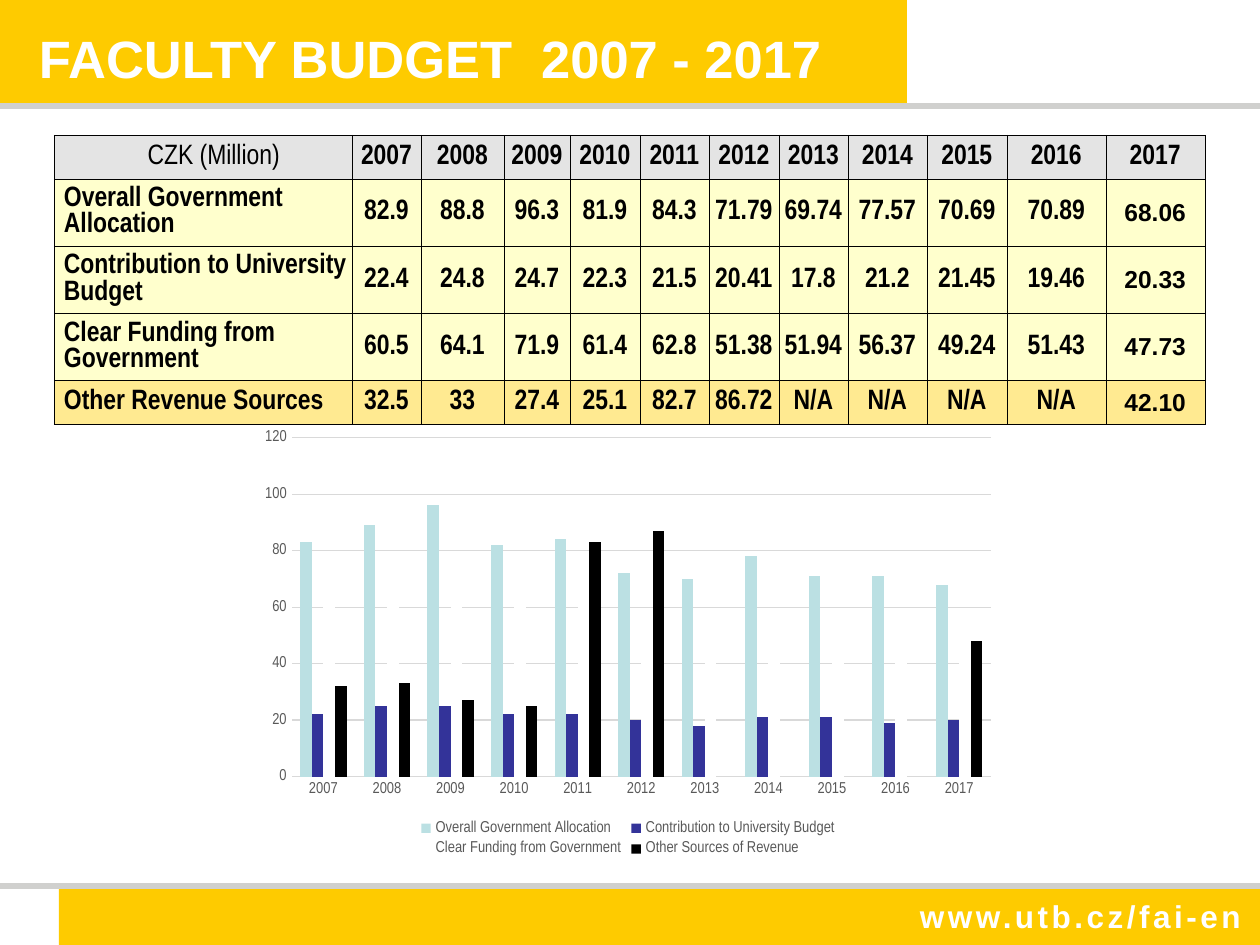
from lxml import etree
from pptx import Presentation
from pptx import util as u
from pptx.chart.data import CategoryChartData
from pptx.dml.color import RGBColor
from pptx.enum import chart as ch, shapes, text
from pptx.oxml.ns import qn

YELLOW = RGBColor(0xFE, 0xCB, 0x00)
RULE = RGBColor(0xD0, 0xD0, 0xCE)
WHITE = RGBColor(0xFF, 0xFF, 0xFF)
BLACK = RGBColor(0x00, 0x00, 0x00)
HEADER = RGBColor(0xE4, 0xE4, 0xE4)
CREAM = RGBColor(0xFF, 0xFF, 0xCD)
SAND = RGBColor(0xFF, 0xEA, 0x91)
GREY = RGBColor(0x59, 0x59, 0x59)
GRID = RGBColor(0xD9, 0xD9, 0xD9)
AQUA = RGBColor(0xBB, 0xE0, 0xE3)
NAVY = RGBColor(0x33, 0x33, 0x99)

YEARS = [str(year) for year in range(2007, 2018)]
BUDGET = [
    ("Overall Government Allocation",
     "82.9 88.8 96.3 81.9 84.3 71.79 69.74 77.57 70.69 70.89 68.06".split()),
    ("Contribution to University Budget",
     "22.4 24.8 24.7 22.3 21.5 20.41 17.8 21.2 21.45 19.46 20.33".split()),
    ("Clear Funding from Government",
     "60.5 64.1 71.9 61.4 62.8 51.38 51.94 56.37 49.24 51.43 47.73".split()),
    ("Other Revenue Sources",
     "32.5 33 27.4 25.1 82.7 86.72 N/A N/A N/A N/A 42.10".split()),
]
OTHER_SOURCES = [32, 33, 27, 25, 83, 87, None, None, None, None, 48]
COLUMNS = [298, 69, 83, 66, 70, 69, 70, 69, 79, 80, 99, 99]
ROWS = [44, 67, 67, 67, 44]


def px(n):
    return u.Emu(round(n * 914400 / 126))


class Deck:
    sans = "Arial"
    narrow = "Arial Narrow"

    def __init__(self, width, height):
        self.prs = Presentation()
        self.prs.slide_width, self.prs.slide_height = px(width), px(height)
        self.s = self.prs.slides.add_slide(self.prs.slide_layouts[6])

    def style(self, font, name, size, color, bold=False):
        font.name, font.size, font.bold = name, u.Pt(size), bold
        font.color.rgb = color

    def run(self, p, words, name, size, color, bold=True):
        r = p.add_run()
        r.text = words
        self.style(r.font, name, size, color, bold)
        return r

    def band(self, *box):
        sp = self.s.shapes.add_shape(shapes.MSO_SHAPE.RECTANGLE, *map(px, box))
        sp.shadow.inherit = False
        sp.fill.solid()
        sp.fill.fore_color.rgb = YELLOW
        sp.line.fill.background()

    def rule(self, y):
        line = self.s.shapes.add_connector(
            shapes.MSO_CONNECTOR.STRAIGHT, 0, px(y), self.prs.slide_width, px(y))
        line.line.color.rgb = RULE
        line.line.width = u.Pt(3)
        etree.SubElement(line._element.spPr, qn("a:effectLst"))

    def label(self, words, size, box, inset, spacing=0):
        tf = self.s.shapes.add_textbox(*map(px, box)).text_frame
        tf.word_wrap = True
        tf.margin_left, tf.margin_right = px(inset), 0
        r = self.run(tf.paragraphs[0], words, self.sans, size, WHITE)
        if spacing:
            r.font._element.set("spc", str(spacing * 100))

    def border(self, cell):
        tcPr = cell._tc.get_or_add_tcPr()
        for side in ("lnL", "lnR", "lnT", "lnB"):
            ln = etree.SubElement(tcPr, qn("a:" + side), w=str(u.Pt(0.25)))
            fill = etree.SubElement(ln, qn("a:solidFill"))
            etree.SubElement(fill, qn("a:srgbClr"), val=str(BLACK))

    def cell(self, cell, words, fill, inset=0, centred=True, small=False, bold=True):
        self.border(cell)
        cell.fill.solid()
        cell.fill.fore_color.rgb = fill
        cell.margin_left = px(inset)
        cell.margin_right = cell.margin_top = cell.margin_bottom = 0
        cell.vertical_anchor = text.MSO_ANCHOR.MIDDLE
        p = cell.text_frame.paragraphs[0]
        p.alignment = text.PP_ALIGN.CENTER if centred else text.PP_ALIGN.LEFT
        name, size = (self.sans, 14) if small else (self.narrow, 16)
        self.run(p, words, name, size, BLACK, bold)

    def table(self, x, y):
        table = self.s.shapes.add_table(
            len(ROWS), len(COLUMNS), px(x), px(y), px(sum(COLUMNS)), px(sum(ROWS))).table
        for column, width in zip(table.columns, COLUMNS):
            column.width = px(width)
        for row, height in zip(table.rows, ROWS):
            row.height = px(height)
        self.cell(table.cell(0, 0), " CZK (Million)", HEADER, 15, bold=False)
        for j, year in enumerate(YEARS, 1):
            self.cell(table.cell(0, j), year, HEADER)
        for i, (name, amounts) in enumerate(BUDGET, 1):
            fill = SAND if i == len(BUDGET) else CREAM
            self.cell(table.cell(i, 0), name, fill, 10, centred=False)
            for j, amount in enumerate(amounts, 1):
                self.cell(table.cell(i, j), amount, fill, small=j == len(YEARS))

    def chart(self, *box):
        data = CategoryChartData()
        data.categories = YEARS
        for name, amounts in BUDGET[:3]:
            data.add_series(name, [round(float(amount)) for amount in amounts])
        data.add_series("Other Sources of Revenue", OTHER_SOURCES)
        chart = self.s.shapes.add_chart(
            ch.XL_CHART_TYPE.COLUMN_CLUSTERED, *map(px, box), data).chart
        self.style(chart.font, self.narrow, 10, BLACK)
        chart.has_title = False
        plot = chart.plots[0]
        plot.gap_width, plot.overlap, plot.vary_by_categories = 150, 0, False
        for series, color in zip(plot.series, (AQUA, NAVY, WHITE, BLACK)):
            series.format.fill.solid()
            series.format.fill.fore_color.rgb = color
            series.invert_if_negative = False
        for axis in (chart.category_axis, chart.value_axis):
            axis.major_tick_mark = axis.minor_tick_mark = ch.XL_TICK_MARK.NONE
            axis.format.line.fill.background()
            self.style(axis.tick_labels.font, self.narrow, 9, GREY)
        grid = chart.value_axis.major_gridlines.format.line
        grid.color.rgb, grid.width = GRID, u.Pt(0.75)
        chart.value_axis.minimum_scale = 0
        chart.value_axis.maximum_scale = 120
        chart.value_axis.major_unit = 20
        chart.has_legend = True
        chart.legend.position = ch.XL_LEGEND_POSITION.BOTTOM
        chart.legend.include_in_layout = False
        self.style(chart.legend.font, self.narrow, 9, GREY)


def main():
    deck = Deck(1260, 945)
    deck.band(0, 0, 907, 106)
    deck.band(59, 887, 1201, 58)
    deck.rule(106)
    deck.rule(886)
    deck.label("www.utb.cz/fai-en", 18, (907, 891, 353, 50), 13, spacing=2)
    deck.label("FACULTY BUDGET  2007 - 2017", 30, (0, 20, 840, 77), 39)
    deck.table(54, 135)
    deck.chart(250, 421, 756, 441)
    deck.prs.save("out.pptx")


if __name__ == "__main__":
    main()
